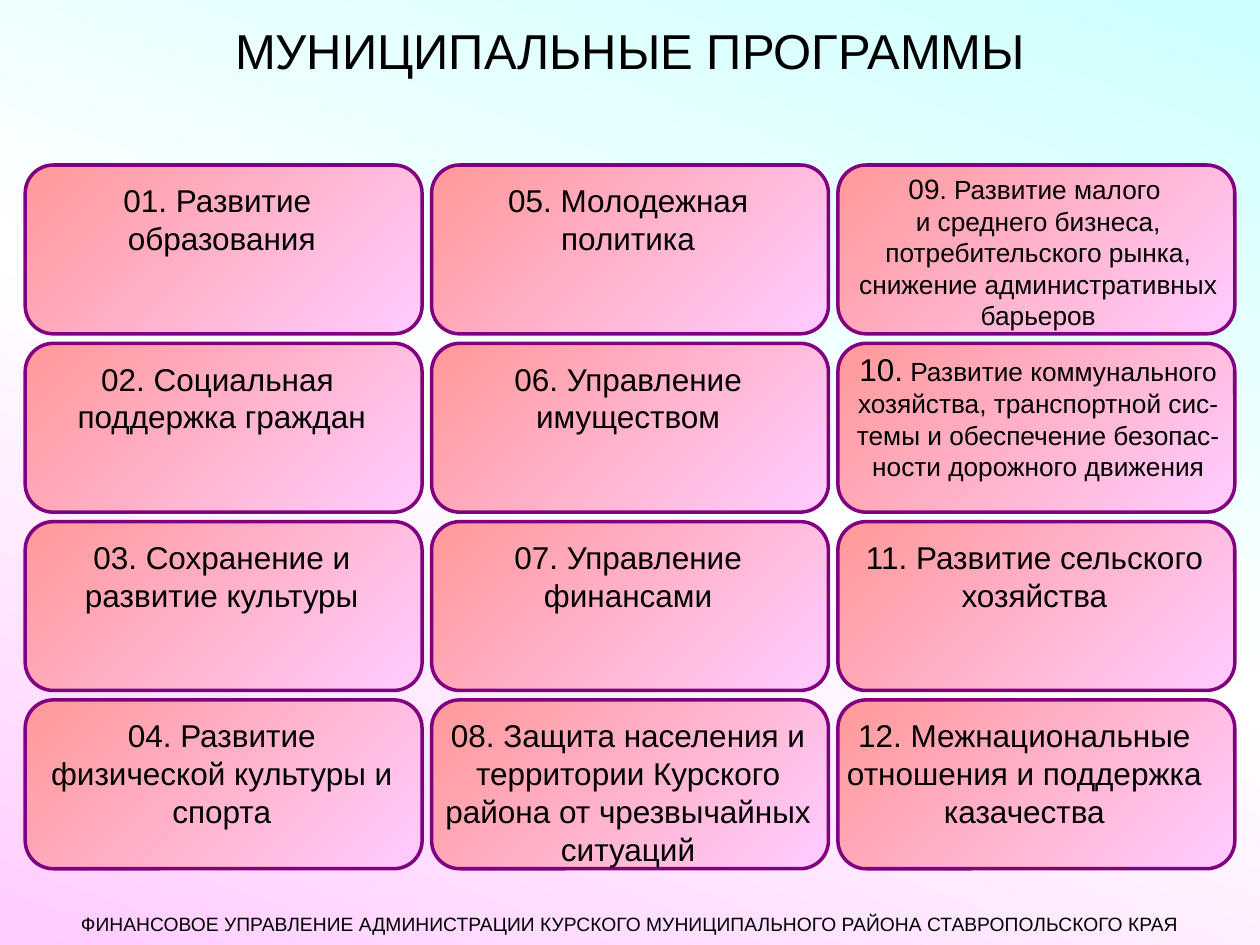
"""Build the slide that lists the twelve municipal programmes."""
from copy import deepcopy

from pptx import Presentation
from pptx.dml.color import RGBColor
from pptx.enum.shapes import MSO_SHAPE
from pptx.enum.text import MSO_ANCHOR, MSO_AUTO_SIZE, PP_ALIGN
from pptx.oxml.ns import qn
from pptx.util import Inches, Pt

ROUNDED = MSO_SHAPE.ROUNDED_RECTANGLE
MIDDLE, TOP = MSO_ANCHOR.MIDDLE, MSO_ANCHOR.TOP
CENTER = PP_ALIGN.CENTER
FIXED = MSO_AUTO_SIZE.NONE

THEME = {
    "font": "Arial",
    "text": "000000",
    "border": "800080",
    "card": [(0, "FF9999"), (1, "FFCCFF")],
    "card_angle": 315,
    "background": [(0, "CCFFFF"), (0.5, "FFFFFF"), (1, "FFCCFF")],
    "background_angle": 250,
    "title": 28,
    "label": 18,
    "number": 16,
    "small": 15,
    "footer": 11,
}

TITLE = "МУНИЦИПАЛЬНЫЕ ПРОГРАММЫ"
FOOTER = ("ФИНАНСОВОЕ УПРАВЛЕНИЕ АДМИНИСТРАЦИИ КУРСКОГО МУНИЦИПАЛЬНОГО "
          "РАЙОНА СТАВРОПОЛЬСКОГО КРАЯ")
PROGRAMME_COLUMNS = [
    [
        [[("01. Развитие ", "label")], [("образования", "label")]],
        [[("02. Социальная ", "label")], [("поддержка граждан", "label")]],
        [[("03. Сохранение и развитие культуры", "label")]],
        [[("04. Развитие физической культуры и спорта", "label")]],
    ],
    [
        [[("05. Молодежная политика", "label")]],
        [[("06. Управление имуществом", "label")]],
        [[("07. Управление финансами", "label")]],
        [[("08. Защита населения и территории Курского района "
           "от чрезвычайных ситуаций", "label")]],
    ],
    [
        [[("09", "number"), (". Развитие малого ", "small")],
         [("и среднего бизнеса, потребительского рынка, "
           "снижение административных барьеров", "small")]],
        [[("10.", "label"),
          (" Развитие коммунального хозяйства, транспортной сис-темы "
           "и обеспечение безопас-ности дорожного движения", "small")]],
        [[("11. Развитие сельского хозяйства", "label")]],
        [[("12. Межнациональные отношения и поддержка казачества", "label")]],
    ],
]

LEFT, TOP_EDGE = 0.2, 1.31
CARD_W, CARD_H = 3.15, 1.34
GAP = 0.075
LABEL_W, LABEL_H = 3.12, 0.7
LABEL_PLACE = (0, 0.08, LABEL_W, LABEL_H)
SPECIAL_PLACES = {
    (2, 0): (-0.17, 0, 3.52, 1.37),
    (2, 1): (-0.17, 0, 3.52, 1.15),
    (0, 3): (0, 0.08, LABEL_W, 1),
    (1, 3): (0, 0.08, LABEL_W, 1.3),
    (2, 3): (-0.08, 0.08, LABEL_W, 1),
}


def set_all(target, values):
    for key, value in values.items():
        setattr(target, key, value)


def paint_gradient(fill, element, stops, angle):
    fill.gradient()
    fill.gradient_angle = angle
    stop_list = element.find(".//" + qn("a:gsLst"))
    while len(stop_list) < len(stops):
        stop_list.append(deepcopy(stop_list[-1]))
    for stop, (position, color) in zip(fill.gradient_stops, stops):
        stop.position = position
        stop.color.rgb = RGBColor.from_string(color)


def write(frame, paragraphs, anchor=TOP, line_spacing=1.0):
    set_all(frame, {"word_wrap": True, "auto_size": FIXED,
                    "vertical_anchor": anchor})
    for index, runs in enumerate(paragraphs):
        paragraph = frame.add_paragraph() if index else frame.paragraphs[0]
        set_all(paragraph, {"alignment": CENTER, "line_spacing": line_spacing})
        for text, size in runs:
            run = paragraph.add_run()
            run.text = text
            set_all(run.font, {"name": THEME["font"], "size": Pt(THEME[size])})
            run.font.color.rgb = RGBColor.from_string(THEME["text"])


def add_card(slide, x, y):
    card = slide.shapes.add_shape(
        ROUNDED, *map(Inches, (x, y, CARD_W, CARD_H)))
    card.shadow.inherit = False
    paint_gradient(card.fill, card.element, THEME["card"], THEME["card_angle"])
    card.line.color.rgb = RGBColor.from_string(THEME["border"])
    card.line.width = Pt(2)


def add_label(slide, place, paragraphs):
    label = slide.shapes.add_textbox(*map(Inches, place))
    write(label.text_frame, paragraphs)


def main():
    deck = Presentation()
    set_all(deck, {"slide_width": Inches(10), "slide_height": Inches(7.5)})
    slide = deck.slides.add_slide(deck.slide_layouts[5])
    paint_gradient(slide.background.fill, slide.element,
                   THEME["background"], THEME["background_angle"])

    title = slide.shapes.title
    set_all(title, {"left": Inches(0), "top": Inches(0.23),
                    "width": Inches(10), "height": Inches(0.39)})
    write(title.text_frame, [[(TITLE, "title")]], MIDDLE, 0.9)

    for column, programmes in enumerate(PROGRAMME_COLUMNS):
        for row, paragraphs in enumerate(programmes):
            x = LEFT + column * (CARD_W + GAP)
            y = TOP_EDGE + row * (CARD_H + GAP)
            add_card(slide, x, y)
            dx, dy, width, height = SPECIAL_PLACES.get(
                (column, row), LABEL_PLACE)
            add_label(slide, (x + dx, y + dy, width, height), paragraphs)

    add_label(slide, (0, 7.19, 10, 0.29), [[(FOOTER, "footer")]])
    deck.save("out.pptx")


if __name__ == "__main__":
    main()
